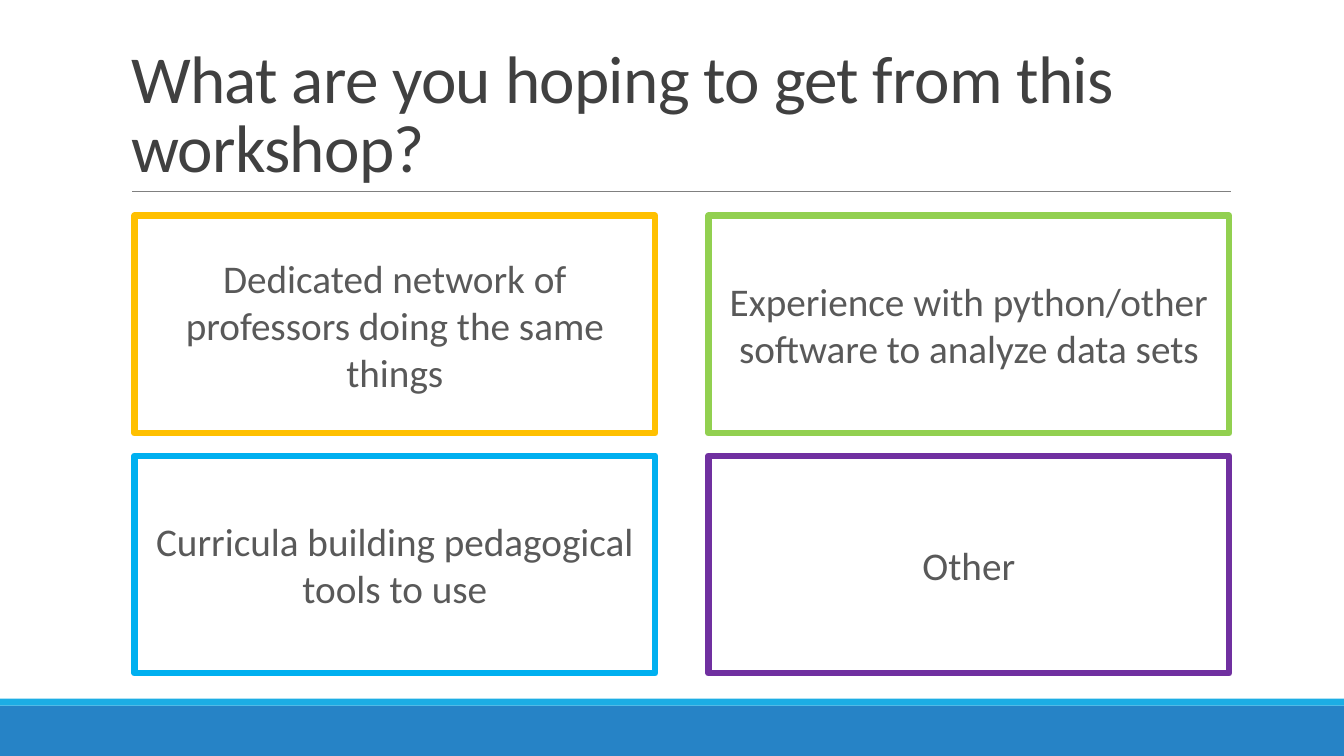
import pptx
import pptx.dml.color
import pptx.enum.shapes
import pptx.enum.text
import pptx.oxml
import pptx.util

Pt = pptx.util.Pt
SLIDE_WIDTH, SLIDE_HEIGHT = 960, 540
FONT = "Calibri"
HOPES = [
    [("Dedicated network of professors doing the same things", "FFC000"),
     ("Experience with python/other software to analyze data sets", "92D050")],
    [("Curricula building pedagogical tools to use", "00B0F0"),
     ("Other", "7030A0")],
]


def color(hex_string):
    return pptx.dml.color.RGBColor.from_string(hex_string)


def style_runs(paragraph, size, hex_string):
    for run in paragraph.runs:
        run.font.name = FONT
        run.font.size = Pt(size)
        run.font.color.rgb = color(hex_string)


def add_rectangle(slide, left, top, width, height):
    rectangle = slide.shapes.add_shape(
        pptx.enum.shapes.MSO_SHAPE.RECTANGLE,
        Pt(left), Pt(top), Pt(width), Pt(height))
    rectangle.shadow.inherit = False
    return rectangle


def add_footer_bands(slide, left, top, width, height):
    stripe_height = 5
    bands = [(top + stripe_height, height - stripe_height, "2683C6"),
             (top, stripe_height, "1CADE4")]
    for band_top, band_height, fill in bands:
        band = add_rectangle(slide, left, band_top, width, band_height)
        band.fill.solid()
        band.fill.fore_color.rgb = color(fill)
        band.line.fill.background()


def add_heading(slide, left, top, width, height):
    # Rule under the title
    rule_left, rule_right = left + 8, left + width + 1
    rule = slide.shapes.add_connector(
        pptx.enum.shapes.MSO_CONNECTOR.STRAIGHT,
        Pt(rule_left), Pt(top + height), Pt(rule_right), Pt(top + height))
    rule.line.color.rgb = color("808080")
    rule.line.width = Pt(0.5)
    rule._element.spPr.append(pptx.oxml.parse_xml(
        '<a:effectLst xmlns:a='
        '"http://schemas.openxmlformats.org/drawingml/2006/main"/>'))

    # Title
    title = slide.shapes.title
    title.left, title.top = Pt(left), Pt(top)
    title.width, title.height = Pt(width), Pt(height)
    frame = title.text_frame
    frame.text = "What are you hoping to get from this workshop?"
    frame.word_wrap = True
    frame.auto_size = pptx.enum.text.MSO_AUTO_SIZE.NONE
    frame.vertical_anchor = pptx.enum.text.MSO_ANCHOR.BOTTOM
    question = frame.paragraphs[0]
    question.alignment = pptx.enum.text.PP_ALIGN.LEFT
    question.line_spacing = 0.85
    style_runs(question, 48, "404040")
    for run in question.runs:
        run.font._element.set("spc", "-50")


def add_hope(slide, left, top, width, height, hope, outline):
    card = add_rectangle(slide, left, top, width, height)
    card.fill.background()
    card.line.color.rgb = color(outline)
    card.line.width = Pt(4.5)
    frame = card.text_frame
    frame.text = hope
    frame.word_wrap = True
    frame.vertical_anchor = pptx.enum.text.MSO_ANCHOR.MIDDLE
    answer = frame.paragraphs[0]
    answer.alignment = pptx.enum.text.PP_ALIGN.CENTER
    style_runs(answer, 28, "595959")


def add_hope_grid(slide, left, top, width, height):
    column_gap, row_gap = 38, 16
    card_width = (width - column_gap) / 2
    card_height = (height - row_gap) / 2
    for row, hopes in enumerate(HOPES):
        for column, (hope, outline) in enumerate(hopes):
            add_hope(slide,
                     left + column * (card_width + column_gap),
                     top + row * (card_height + row_gap),
                     card_width, card_height, hope, outline)


def main():
    workshop = pptx.Presentation()
    workshop.slide_width = Pt(SLIDE_WIDTH)
    workshop.slide_height = Pt(SLIDE_HEIGHT)
    slide = workshop.slides.add_slide(
        workshop.slide_layouts.get_by_name("Title Only"))
    add_footer_bands(slide, 0, 499, SLIDE_WIDTH, 41)
    add_heading(slide, 86.4, 22.2, 792, 114.4)
    add_hope_grid(slide, 96, 154, 782, 327)
    workshop.save("out.pptx")


if __name__ == "__main__":
    main()
